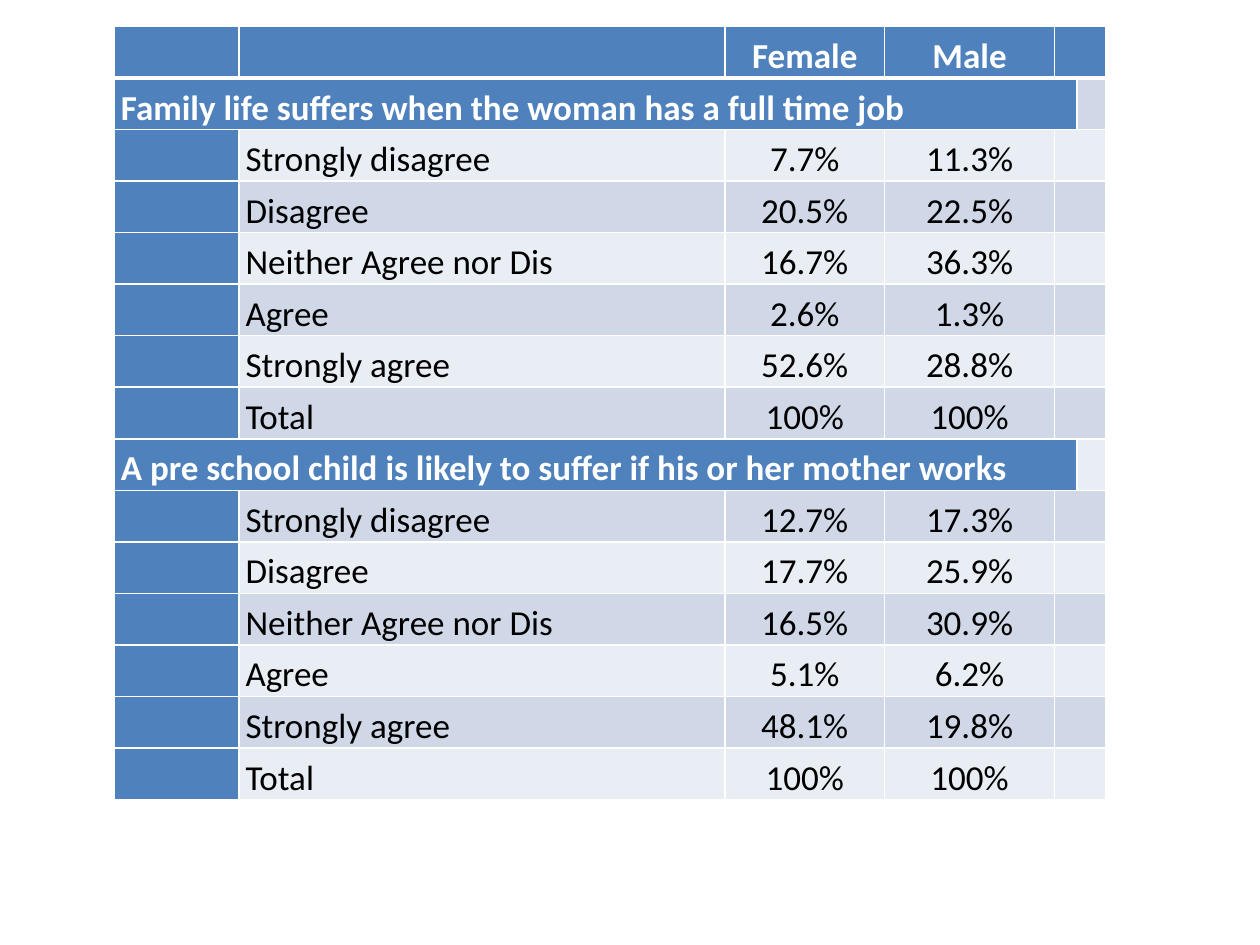
"""Build a survey table comparing female and male attitudes to working mothers."""
from dataclasses import dataclass

from lxml import etree
from pptx import Presentation
from pptx import util as u
from pptx.dml.color import RGBColor
from pptx.enum import text
from pptx.oxml import ns


@dataclass(frozen=True)
class Theme:
    """Colours, type and line sizes of the slide."""
    accent: str = "4F81BD"
    bands: tuple = ("E9EDF4", "D0D8E8")
    light: str = "FFFFFF"
    dark: str = "000000"
    font: str = "Calibri"
    size: int = 20
    leading: float = 1.15
    inset: float = 0.05
    rule: int = 1
    header_rule: int = 3


THEME = Theme()
COLUMN_INCHES = (0.99, 3.86, 1.27, 1.35, 0.18, 0.23)
ANSWERS = ("Strongly disagree", "Disagree", "Neither Agree nor Dis",
           "Agree", "Strongly agree", "Total")
QUESTIONS = (
    ("Family life suffers when the woman has a full time job",
     ("7.7%", "20.5%", "16.7%", "2.6%", "52.6%", "100%"),
     ("11.3%", "22.5%", "36.3%", "1.3%", "28.8%", "100%")),
    ("A pre school child is likely to suffer if his or her mother works",
     ("12.7%", "17.7%", "16.5%", "5.1%", "48.1%", "100%"),
     ("17.3%", "25.9%", "30.9%", "6.2%", "19.8%", "100%")),
)


def survey_rows():
    """Return the header, then each question followed by its answers."""
    rows = [("", "", "Female", "Male")]
    for question, female, male in QUESTIONS:
        rows.append((question,))
        rows.extend(("", *answer) for answer in zip(ANSWERS, female, male))
    return rows


def set_borders(cell, top, bottom):
    """Draw the four rules of a cell, with the given top and bottom weights."""
    properties = cell._tc.get_or_add_tcPr()
    weights = {"L": THEME.rule, "R": THEME.rule, "T": top, "B": bottom}
    for side, weight in weights.items():
        line = etree.SubElement(properties, ns.qn(f"a:ln{side}"), w=str(u.Pt(weight)))
        fill = etree.SubElement(line, ns.qn("a:solidFill"))
        etree.SubElement(fill, ns.qn("a:srgbClr"), val=THEME.light)


def write_cell(cell, wording, emphasis, centred):
    """Write one run of text at the foot of a cell."""
    cell.vertical_anchor = text.MSO_ANCHOR.BOTTOM
    paragraph = cell.text_frame.paragraphs[0]
    paragraph.alignment = text.PP_ALIGN.CENTER if centred else text.PP_ALIGN.LEFT
    paragraph.line_spacing = THEME.leading
    run = paragraph.add_run()
    run.text = wording
    run.font.name = THEME.font
    run.font.size = u.Pt(THEME.size)
    run.font.bold = emphasis
    run.font.color.rgb = RGBColor.from_string(THEME.light if emphasis else THEME.dark)


def style_cell(cell, row, fill):
    """Set the margins, rules and fill of a cell."""
    cell.margin_left = cell.margin_right = u.Inches(THEME.inset)
    cell.margin_top = cell.margin_bottom = 0
    set_borders(cell,
                THEME.header_rule if row == 1 else THEME.rule,
                THEME.header_rule if row == 0 else THEME.rule)
    cell.fill.solid()
    cell.fill.fore_color.rgb = RGBColor.from_string(fill)


def add_survey_table(slide, left, top, width, height):
    """Place the survey table in the given box."""
    rows = survey_rows()
    table = slide.shapes.add_table(
        len(rows), len(COLUMN_INCHES), left, top, width, height).table
    table.horz_banding = False
    for column, share in zip(table.columns, COLUMN_INCHES):
        column.width = int(width * share / sum(COLUMN_INCHES))
    last = len(COLUMN_INCHES) - 1
    for row, wordings in enumerate(rows):
        table.rows[row].height = int(height / len(rows))
        is_header = row == 0
        is_question = len(wordings) == 1
        for column in range(len(COLUMN_INCHES)):
            accented = is_header or column == 0 or (is_question and column < last)
            fill = THEME.accent if accented else THEME.bands[row % 2]
            style_cell(table.cell(row, column), row, fill)
        if is_question:
            table.cell(row, 0).merge(table.cell(row, last - 1))
        else:
            table.cell(row, last - 1).merge(table.cell(row, last))
        for column, wording in enumerate(wordings):
            if wording:
                write_cell(table.cell(row, column), wording,
                           is_header or is_question, column > 1)


def main():
    """Build and save the slide."""
    presentation = Presentation()
    presentation.slide_width = u.Inches(10)
    presentation.slide_height = u.Inches(7.5)
    slide = presentation.slides.add_slide(presentation.slide_layouts[6])
    add_survey_table(slide, u.Inches(0.91), u.Inches(0.21),
                     u.Inches(7.87), u.Inches(6.14))
    presentation.save("out.pptx")


if __name__ == "__main__":
    main()
